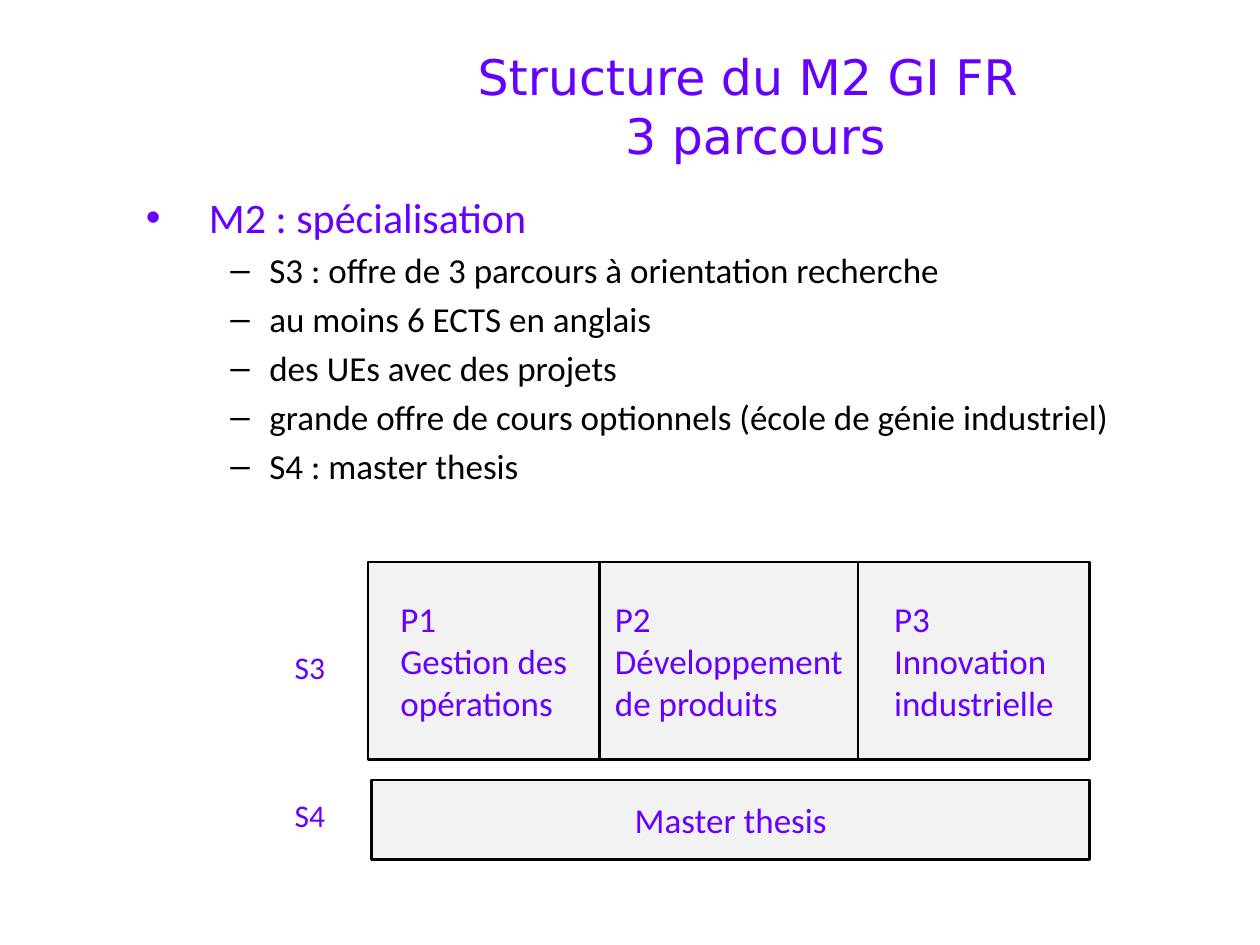
from typing import NamedTuple

from lxml import etree
from pptx import Presentation
from pptx.dml.color import RGBColor
from pptx.enum.shapes import MSO_SHAPE
from pptx.enum.text import MSO_ANCHOR, MSO_AUTO_SIZE, PP_ALIGN
from pptx.oxml.ns import qn
from pptx.util import Inches, Pt

RECT = MSO_SHAPE.RECTANGLE
MIDDLE = MSO_ANCHOR.MIDDLE
CENTER = PP_ALIGN.CENTER
LEFT = PP_ALIGN.LEFT
GROW = MSO_AUTO_SIZE.SHAPE_TO_FIT_TEXT

VIOLET = RGBColor(0x66, 0x00, 0xFF)
BLACK = RGBColor(0x00, 0x00, 0x00)
GREY = RGBColor(0xF2, 0xF2, 0xF2)
SANS = "Calibri"


class Box(NamedTuple):
    x: float
    y: float
    w: float
    h: float
    lines: list[str]


class Level(NamedTuple):
    mark: str
    margin: float
    indent: float
    size: int
    color: RGBColor
    before: float


TOP = Level("•", 0.5, -0.5, 24, VIOLET, 0)
SUB = Level("–", 0.98, -0.31, 20, BLACK, 4)

ITEMS = [
    (TOP, "M2 : spécialisation"),
    (SUB, "S3 : offre de 3 parcours à orientation recherche"),
    (SUB, "au moins 6 ECTS en anglais"),
    (SUB, "des UEs avec des projets"),
    (SUB, "grande offre de cours optionnels (école de génie industriel)"),
    (SUB, "S4 : master thesis"),
]
TRACKS = [
    Box(6.81, 4.46, 1.84, 1.57, ["P3", "Innovation industrielle"]),
    Box(4.76, 4.46, 2.05, 1.57, ["P2", "Développement de produits"]),
    Box(2.92, 4.46, 1.84, 1.57, ["P1", "Gestion des opérations"]),
    Box(2.95, 6.19, 5.7, 0.63, ["Master thesis"]),
]
LABELS = [
    Box(2.24, 5.09, 0.45, 0.4, ["S3"]),
    Box(2.24, 6.27, 0.45, 0.4, ["S4"]),
]
TITLE = Box(2.11, 0.37, 7.77, 0.94, ["Structure du M2 GI FR \v3 parcours"])
BODY = Box(1.06, 1.47, 8.5, 3.07, [text for _, text in ITEMS])


def place(box: Box) -> tuple:
    return tuple(Inches(n) for n in box[:4])


def style(para, size: int, color: RGBColor, face: str = SANS) -> None:
    para.font.size = Pt(size)
    para.font.name = face
    para.font.color.rgb = color


def write(frame, box: Box, size: int, align=LEFT, face: str = SANS) -> None:
    frame.text = "\n".join(box.lines)
    for para in frame.paragraphs:
        para.alignment = align
        style(para, size, VIOLET, face)


def add_title(slide, box: Box) -> None:
    frame = slide.shapes.add_textbox(*place(box)).text_frame
    frame.word_wrap = True
    frame.vertical_anchor = MIDDLE
    write(frame, box, 28, CENTER, "DejaVu Sans")


def add_track(slide, box: Box) -> None:
    shape = slide.shapes.add_shape(RECT, *place(box))
    shape.shadow.inherit = False
    shape.fill.solid()
    shape.fill.fore_color.rgb = GREY
    shape.line.color.rgb = BLACK
    shape.line.width = Pt(1.5)
    frame = shape.text_frame
    frame.word_wrap = True
    frame.vertical_anchor = MIDDLE
    frame._txBody.bodyPr.set("anchorCtr", "1")
    write(frame, box, 20)


def add_body(slide, box: Box) -> None:
    frame = slide.shapes.add_textbox(*place(box)).text_frame
    frame.word_wrap = True
    frame.text = "\n".join(box.lines)
    for para, (level, _) in zip(frame.paragraphs, ITEMS):
        para.level = int(level is SUB)
        para.space_before = Pt(level.before)
        props = para._p.get_or_add_pPr()
        props.set("marL", str(Inches(level.margin)))
        props.set("indent", str(Inches(level.indent)))
        font = etree.SubElement(props, qn("a:buFont"))
        font.set("typeface", "Arial")
        mark = etree.SubElement(props, qn("a:buChar"))
        mark.set("char", level.mark)
        style(para, level.size, level.color)


def add_label(slide, box: Box) -> None:
    frame = slide.shapes.add_textbox(*place(box)).text_frame
    frame.word_wrap = False
    frame.auto_size = GROW
    write(frame, box, 18)


def main() -> None:
    deck = Presentation()
    deck.slide_width = Inches(10)
    deck.slide_height = Inches(7.5)
    slide = deck.slides.add_slide(deck.slide_layouts[6])
    add_title(slide, TITLE)
    for box in TRACKS:
        add_track(slide, box)
    add_body(slide, BODY)
    for box in LABELS:
        add_label(slide, box)
    deck.save("out.pptx")


if __name__ == "__main__":
    main()
